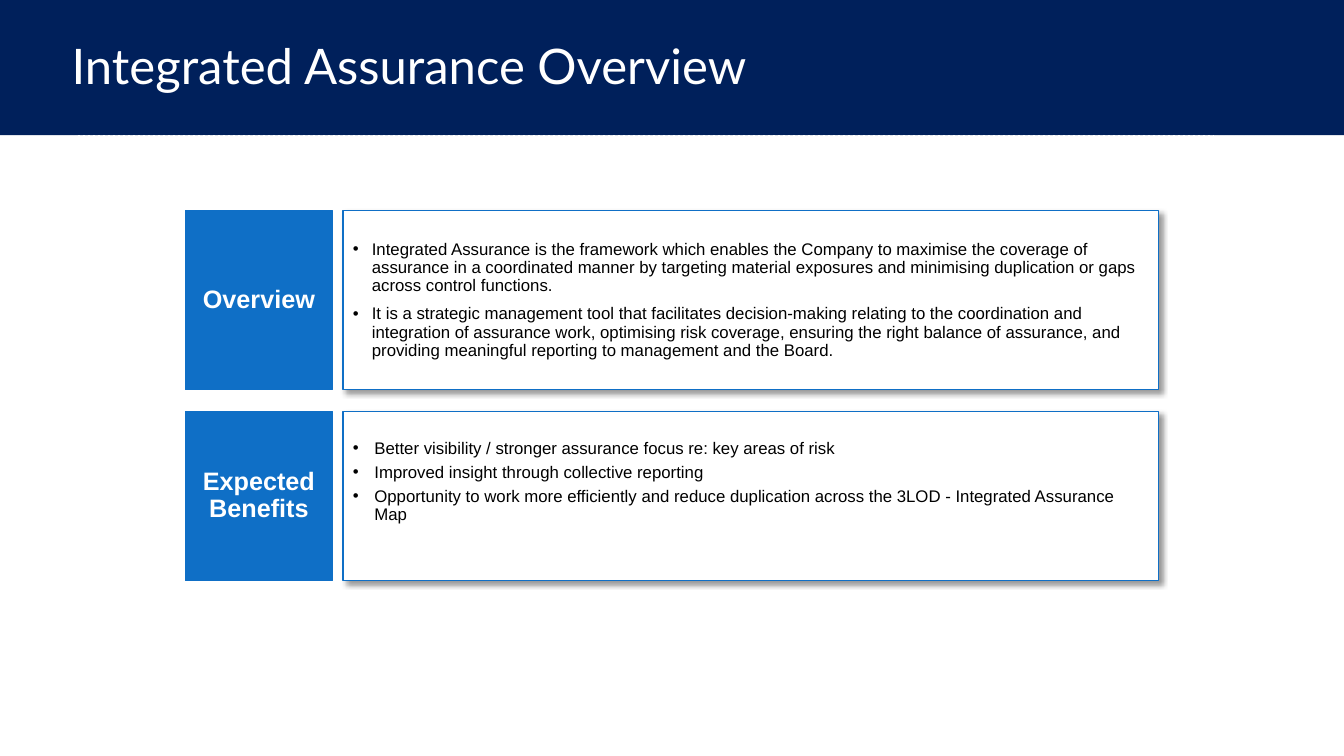
from lxml import etree
from pptx import Presentation
from pptx.dml.color import RGBColor
from pptx.enum.dml import MSO_LINE
from pptx.enum.shapes import MSO_CONNECTOR, MSO_SHAPE
from pptx.enum.text import MSO_ANCHOR, MSO_AUTO_SIZE, PP_ALIGN
from pptx.oxml import parse_xml
from pptx.oxml.ns import nsdecls, qn
from pptx.util import Pt

RECTANGLE = MSO_SHAPE.RECTANGLE
STRAIGHT = MSO_CONNECTOR.STRAIGHT
DASH = MSO_LINE.DASH
MIDDLE = MSO_ANCHOR.MIDDLE
NO_FIT = MSO_AUTO_SIZE.NONE
LEFT, CENTER = PP_ALIGN.LEFT, PP_ALIGN.CENTER

COLORS = {"navy": "00205B", "blue": "0F6FC6", "white": "FFFFFF", "black": "000000"}
SLIDE_W, SLIDE_H = 960, 540
BAND_H = 96.5
LABEL_X, LABEL_W = 132.3, 105.3
PANEL_X, PANEL_W = 244.9, 582.5

SECTIONS = [
    {
        "label": "Overview",
        "top": 150.5,
        "height": 127.8,
        "points": [
            "Integrated Assurance is the framework which enables the Company to maximise "
            "the coverage of assurance in a coordinated manner by targeting material "
            "exposures and minimising duplication or gaps across control functions.",
            "It is a strategic management tool that facilitates decision-making relating "
            "to the coordination and integration of assurance work, optimising risk "
            "coverage, ensuring the right balance of assurance, and providing meaningful "
            "reporting to management and the Board.",
        ],
        "format": {"margins": (7.2, 3.6, 7.2, 3.6), "indent": (13.5, -13.5),
                   "spacing": 0.9, "gap": 7.5},
    },
    {
        "label": "Expected Benefits",
        "top": 293.9,
        "height": 120.9,
        "points": [
            "Better visibility / stronger assurance focus re: key areas of risk",
            "Improved insight through collective reporting",
            "Opportunity to work more efficiently and reduce duplication across the 3LOD "
            "- Integrated Assurance Map",
        ],
        "format": {"margins": (7.2, 7.2, 7.2, 27.2), "indent": (15.3, -15.3),
                   "spacing": Pt(13), "gap": 4},
    },
]


def rgb(name):
    return RGBColor.from_string(COLORS[name])


def place(shape, left, top, width, height):
    shape.left, shape.top = Pt(left), Pt(top)
    shape.width, shape.height = Pt(width), Pt(height)


def paint(shape, fill, line=None):
    shape.fill.solid()
    shape.fill.fore_color.rgb = rgb(fill)
    if line:
        shape.line.color.rgb = rgb(line)
        shape.line.width = Pt(1)
    else:
        shape.line.fill.background()


def add_bullet(paragraph, indent):
    properties = paragraph._p.get_or_add_pPr()
    margin, hanging = indent
    properties.set("marL", str(Pt(margin)))
    properties.set("indent", str(Pt(hanging)))
    etree.SubElement(properties, qn("a:buFont")).set("typeface", "Arial")
    etree.SubElement(properties, qn("a:buChar")).set("char", "•")


def write(shape, texts, size, color, font="Arial", bold=False, align=LEFT,
          margins=(7.2, 3.6, 7.2, 3.6), indent=None, spacing=0.9, gap=0):
    frame = shape.text_frame
    frame.word_wrap = True
    frame.auto_size = NO_FIT
    frame.vertical_anchor = MIDDLE
    (frame.margin_left, frame.margin_top,
     frame.margin_right, frame.margin_bottom) = map(Pt, margins)
    for number, text in enumerate(texts):
        paragraph = frame.add_paragraph() if number else frame.paragraphs[0]
        paragraph.alignment = align
        paragraph.line_spacing = spacing
        paragraph.space_before = Pt(gap if number else 0)
        if indent:
            add_bullet(paragraph, indent)
        run = paragraph.add_run()
        run.text = text
        run.font.name = font
        run.font.size = Pt(size)
        run.font.bold = bold
        run.font.color.rgb = rgb(color)


def add_block(slide, left, top, width, height, fill, line=None):
    block = slide.shapes.add_shape(RECTANGLE, Pt(left), Pt(top), Pt(width), Pt(height))
    paint(block, fill, line)
    block.shadow.inherit = False
    return block


def add_header(slide):
    band = add_block(slide, 0, 0, SLIDE_W, BAND_H, "navy")
    rule = slide.shapes.add_connector(STRAIGHT, Pt(55.4), Pt(BAND_H), Pt(866.2), Pt(BAND_H))
    rule.line.color.rgb = rgb("white")
    rule.line.width = Pt(0.5)
    rule.line.dash_style = DASH
    etree.SubElement(rule._element.spPr, qn("a:effectLst"))
    tree = slide.shapes._spTree
    tree.insert(2, band._element)
    tree.insert(3, rule._element)

    title = slide.shapes.title
    place(title, 43.9, 5.8, 834.5, 86.4)
    write(title, ["Integrated Assurance Overview"], 35, "white", font="Lato")


def cast_shadow(shape):
    shape._element.spPr.append(parse_xml(
        f'<a:effectLst {nsdecls("a")}>'
        f'<a:outerShdw blurRad="{Pt(4)}" dist="{Pt(3)}" dir="2700000" algn="tl" '
        f'rotWithShape="0"><a:srgbClr val="{COLORS["black"]}">'
        '<a:alpha val="40000"/></a:srgbClr></a:outerShdw></a:effectLst>'))


def add_section(slide, panel, section):
    top, height = section["top"], section["height"]
    place(panel, PANEL_X, top, PANEL_W, height)
    paint(panel, "white", "blue")
    cast_shadow(panel)
    write(panel, section["points"], 12, "black", **section["format"])

    label = add_block(slide, LABEL_X, top, LABEL_W, height, "blue", "blue")
    write(label, [section["label"]], 18, "white", bold=True, align=CENTER,
          margins=(2.9, 3.6, 2.9, 3.6))


def main():
    deck = Presentation()
    deck.slide_width, deck.slide_height = Pt(SLIDE_W), Pt(SLIDE_H)
    two_content = deck.slide_layouts[3]
    slide = deck.slides.add_slide(two_content)
    add_header(slide)
    for number, section in enumerate(SECTIONS, start=1):
        add_section(slide, slide.placeholders[number], section)
    deck.save("out.pptx")


if __name__ == "__main__":
    main()
